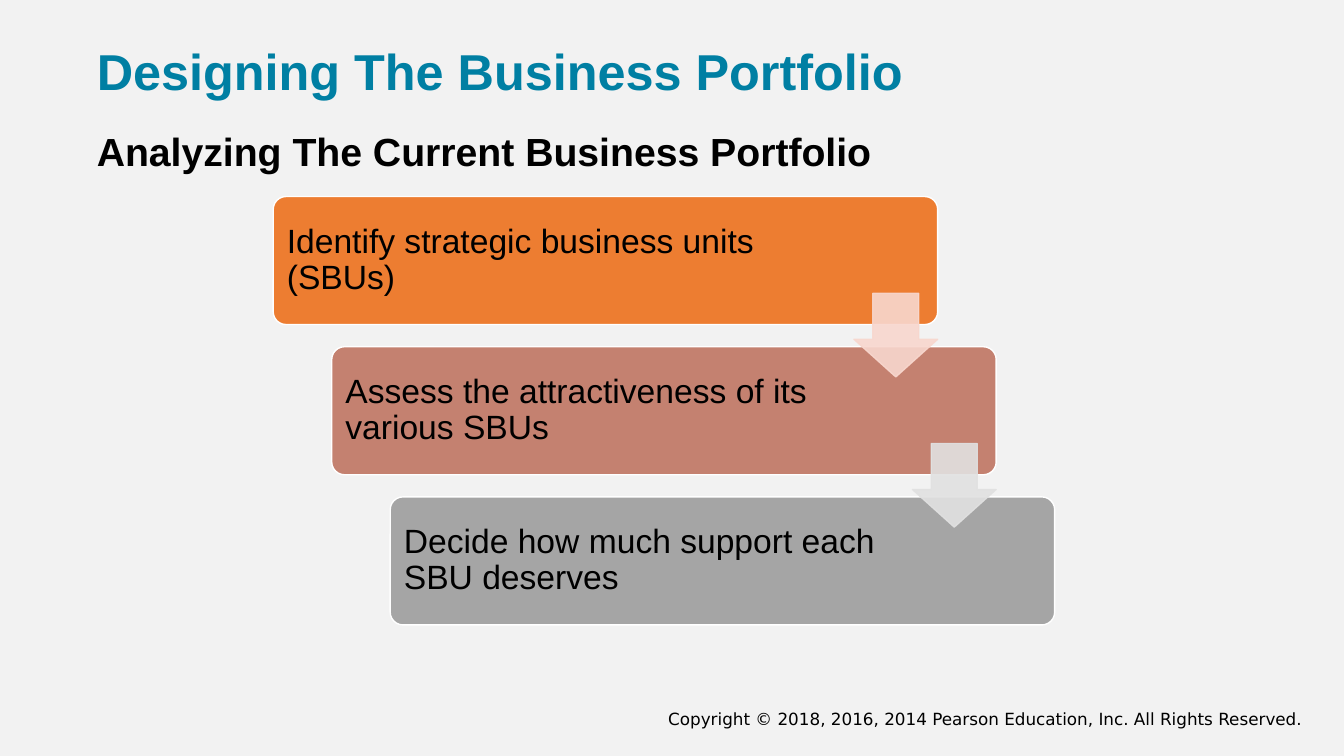
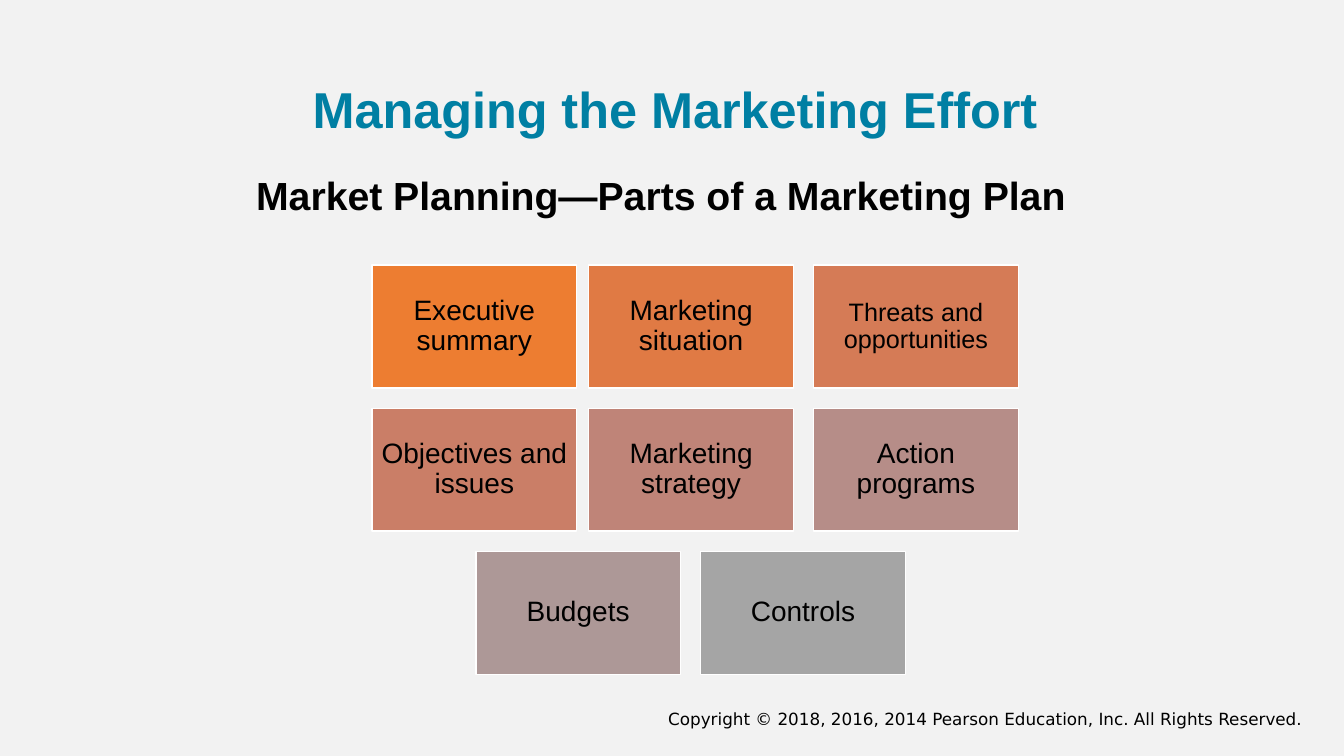
import lxml.etree
import pptx
import pptx.dml.color
import pptx.enum.shapes
import pptx.enum.text
import pptx.oxml.ns
import pptx.util

Inches = pptx.util.Inches
RGBColor = pptx.dml.color.RGBColor
Shape = pptx.enum.shapes.MSO_SHAPE
Align = pptx.enum.text.PP_ALIGN
Anchor = pptx.enum.text.MSO_ANCHOR
qn = pptx.oxml.ns.qn

BACKGROUND = RGBColor(0xF2, 0xF2, 0xF2)
TEAL = RGBColor(0x00, 0x7F, 0xA3)
BLACK = RGBColor(0x00, 0x00, 0x00)
WHITE = RGBColor(0xFF, 0xFF, 0xFF)
ORANGE = RGBColor(0xED, 0x7D, 0x31)
AMBER = RGBColor(0xE0, 0x7A, 0x44)
COPPER = RGBColor(0xD5, 0x7B, 0x56)
CORAL = RGBColor(0xCA, 0x7E, 0x67)
ROSE = RGBColor(0xC4, 0x81, 0x70)
CLAY = RGBColor(0xBF, 0x84, 0x78)
MAUVE = RGBColor(0xB6, 0x8D, 0x88)
TAUPE = RGBColor(0xAD, 0x98, 0x97)
GRAY = RGBColor(0xA5, 0xA5, 0xA5)
PALE_PINK = RGBColor(0xF8, 0xD7, 0xCE)
PALE_GRAY = RGBColor(0xE1, 0xE1, 0xE1)

COPYRIGHT = "Copyright © 2018, 2016, 2014 Pearson Education, Inc. All Rights Reserved."


class Deck:
    """Holds the shared style and the slide being built."""

    def __init__(self):
        self.presentation = pptx.Presentation()
        self.presentation.slide_width = Inches(13.33)
        self.presentation.slide_height = Inches(7.5)
        background = self.presentation.slide_master.background.fill
        background.solid()
        background.fore_color.rgb = BACKGROUND
        self.layout = self.presentation.slide_layouts[1]
        self.slide = None

    def set_text(self, shape, text, size, color=BLACK, bold=False, font="Arial",
                 align=Align.LEFT, anchor=Anchor.MIDDLE, spacing=0.9):
        frame = shape.text_frame
        frame.word_wrap = True
        frame.auto_size = pptx.enum.text.MSO_AUTO_SIZE.NONE
        frame.vertical_anchor = anchor
        paragraph = frame.paragraphs[0]
        paragraph.alignment = align
        paragraph.line_spacing = spacing
        paragraph.space_before = pptx.util.Pt(0)
        run = paragraph.add_run()
        run.text = text
        run.font.name = font
        run.font.size = pptx.util.Pt(size)
        run.font.bold = bold
        run.font.color.rgb = color

    def place(self, shape, box):
        shape.left, shape.top, shape.width, shape.height = map(Inches, box)

    def add_slide(self, title, title_box, subtitle, subtitle_box):
        first = self.slide is None
        self.slide = self.presentation.slides.add_slide(self.layout)
        if first:
            self.add_footer()
        heading = self.slide.shapes.title
        self.place(heading, title_box)
        self.set_text(heading, title, 36, TEAL, bold=True)
        body = self.slide.placeholders[1]
        self.place(body, subtitle_box)
        properties = next(body.element.iter(qn("a:p"))).get_or_add_pPr()
        properties.set("marL", "0")
        properties.set("indent", "0")
        lxml.etree.SubElement(properties, qn("a:buNone"))
        self.set_text(body, subtitle, 28, bold=True, anchor=Anchor.TOP)

    def add_footer(self):
        footer = self.slide.shapes.add_textbox(*map(Inches, (6.21, 6.98, 6.81, 0.31)))
        self.set_text(footer, COPYRIGHT, 12, font="DejaVu Sans", align=Align.RIGHT,
                      anchor=Anchor.TOP, spacing=1.0)
        self.layout.shapes.element.append(footer.element)

    def add_shape(self, kind, box, fill, line, adjustments=()):
        shape = self.slide.shapes.add_shape(kind, *map(Inches, box))
        shape.shadow.inherit = False
        shape.fill.solid()
        shape.fill.fore_color.rgb = fill
        shape.line.color.rgb = line
        shape.line.width = pptx.util.Pt(1)
        for index, value in enumerate(adjustments):
            shape.adjustments[index] = value
        return shape

    def add_step(self, left, top, text, fill):
        step = self.add_shape(Shape.ROUNDED_RECTANGLE, (left, top, 6.59, 1.27),
                              fill, WHITE, (0.1,))
        step.text_frame.margin_right = Inches(1.5)
        self.set_text(step, text, 24)

    def add_arrow(self, left, top, color):
        arrow = self.add_shape(Shape.DOWN_ARROW, (left, top, 0.83, 0.83),
                               color, color, (0.55, 0.45))
        for element in list(arrow.element.iter(qn("a:srgbClr"))):
            lxml.etree.SubElement(element, qn("a:alpha")).set("val", "90000")

    def add_tile(self, left, top, text, fill, size=20):
        tile = self.add_shape(Shape.RECTANGLE, (left, top, 2.03, 1.22), fill, WHITE)
        tile.text_frame.margin_left = tile.text_frame.margin_right = Inches(0.08)
        self.set_text(tile, text, size, align=Align.CENTER)


def build_portfolio(deck):
    deck.add_slide("Designing The Business Portfolio", (0.86, 0.34, 10.98, 0.8),
                   "Analyzing The Current Business Portfolio", (0.86, 1.27, 10.74, 0.63))
    across, down = 0.58, 1.49
    steps = [
        ("Identify strategic business units (SBUs)", ORANGE),
        ("Assess the attractiveness of its various SBUs", ROSE),
        ("Decide how much support each SBU deserves", GRAY),
    ]
    for index, (text, fill) in enumerate(steps):
        deck.add_step(2.71 + index * across, 1.95 + index * down, text, fill)
    for index, color in enumerate((PALE_PINK, PALE_GRAY)):
        deck.add_arrow(8.47 + index * across, 2.91 + index * down, color)


def build_plan(deck):
    deck.add_slide("Managing the Marketing Effort", (3, 0.79, 7.68, 0.64),
                   "Market Planning—Parts of a Marketing Plan", (2.44, 1.7, 8.8, 0.71))
    columns = (3.69, 5.84, 8.07)
    rows = [
        (columns, [("Executive summary", ORANGE), ("Marketing situation", AMBER),
                   ("Threats and opportunities", COPPER, 18)]),
        (columns, [("Objectives and issues", CORAL), ("Marketing strategy", CLAY),
                   ("Action programs", MAUVE)]),
        ((4.72, 6.95), [("Budgets", TAUPE), ("Controls", GRAY)]),
    ]
    for index, (lefts, tiles) in enumerate(rows):
        for left, tile in zip(lefts, tiles):
            deck.add_tile(left, 2.63 + index * 1.42, *tile)


def main():
    deck = Deck()
    build_portfolio(deck)
    build_plan(deck)
    deck.presentation.save("out.pptx")


if __name__ == "__main__":
    main()
